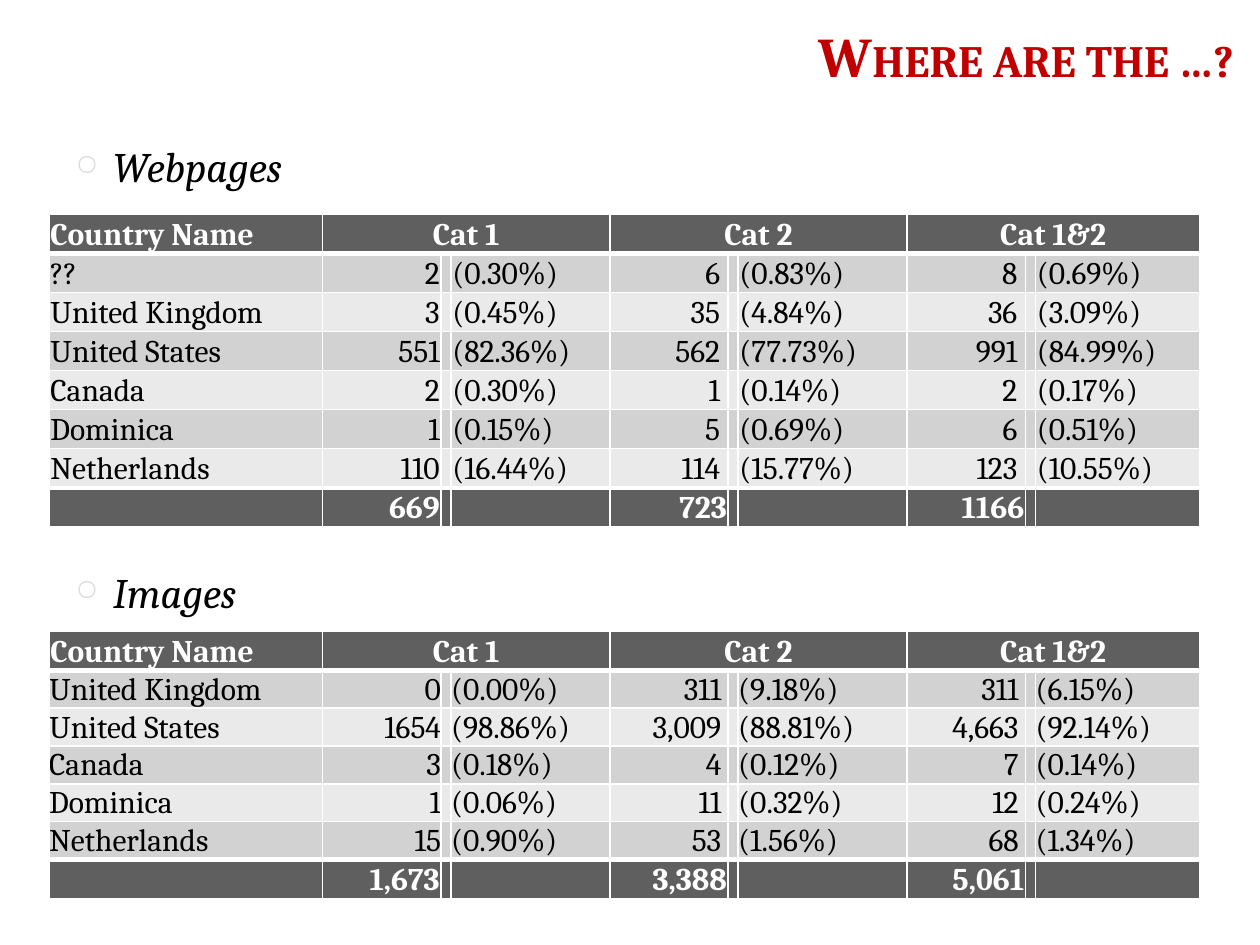
from dataclasses import dataclass

from lxml.etree import SubElement
from pptx import Presentation
from pptx.dml.color import RGBColor
from pptx.enum.text import MSO_ANCHOR as Anchor, PP_ALIGN as Align
from pptx.oxml.ns import qn
from pptx.util import Inches, Pt

FONT = "Cambria"
RED = RGBColor(0xC0, 0x00, 0x00)
BLACK = RGBColor(0x00, 0x00, 0x00)
WHITE = RGBColor(0xFF, 0xFF, 0xFF)
DARK = RGBColor(0x5F, 0x5F, 0x5F)
BANDS = (RGBColor(0xD2, 0xD2, 0xD2), RGBColor(0xEA, 0xEA, 0xEA))
WIDTHS = (2.17, 0.94, 0.08, 1.26, 0.94, 0.08, 1.34, 0.94, 0.08, 1.3)
GROUPS = {1: "Cat 1", 4: "Cat 2", 7: "Cat 1&2"}
HIGH = 0.3


@dataclass
class Entry:
    name: str
    counts: tuple[str, str, str]
    shares: tuple[str, str, str]


@dataclass
class Section:
    title: str
    top: float
    grid: float
    pad: float
    rows: list[Entry]
    totals: tuple[str, str, str]


SECTIONS = [
    Section("Webpages", 1.07, 1.7, 0.01, [
        Entry("??", ("2", "6", "8"), ("0.30", "0.83", "0.69")),
        Entry("United Kingdom", ("3", "35", "36"), ("0.45", "4.84", "3.09")),
        Entry("United States", ("551", "562", "991"), ("82.36", "77.73", "84.99")),
        Entry("Canada", ("2", "1", "2"), ("0.30", "0.14", "0.17")),
        Entry("Dominica", ("1", "5", "6"), ("0.15", "0.69", "0.51")),
        Entry("Netherlands", ("110", "114", "123"), ("16.44", "15.77", "10.55")),
    ], ("669", "723", "1166")),
    Section("Images", 4.45, 5.01, 0, [
        Entry("United Kingdom", ("0", "311", "311"), ("0.00", "9.18", "6.15")),
        Entry("United States", ("1654", "3,009", "4,663"), ("98.86", "88.81", "92.14")),
        Entry("Canada", ("3", "4", "7"), ("0.18", "0.12", "0.14")),
        Entry("Dominica", ("1", "11", "12"), ("0.06", "0.32", "0.24")),
        Entry("Netherlands", ("15", "53", "68"), ("0.90", "1.56", "1.34")),
    ], ("1,673", "3,388", "5,061")),
]


def add_run(para, text: str, size: float, color: RGBColor, bold=False, italic=False):
    run = para.add_run()
    run.text = text
    font = run.font
    font.name, font.size = FONT, Pt(size)
    font.bold, font.italic = bold, italic
    font.color.rgb = color
    return run


def add_box(slide, left: float, top: float, width: float, height: float):
    box = slide.shapes.add_textbox(
        Inches(left), Inches(top), Inches(width), Inches(height))
    box.text_frame.word_wrap = True
    return box.text_frame


def add_title(slide, text: str) -> None:
    frame = add_box(slide, 0.2, 0.14, 9.69, 0.61)
    frame.vertical_anchor = Anchor.BOTTOM
    para = frame.paragraphs[0]
    para.alignment = Align.RIGHT
    run = add_run(para, text, 32, RED, bold=True)
    run.font._element.set("cap", "small")


def add_bullet(slide, text: str, top: float) -> None:
    para = add_box(slide, 0.5, top, 9.02, 0.5).paragraphs[0]
    props = para._p.get_or_add_pPr()
    props.set("marL", str(Inches(0.3)))
    props.set("indent", str(-Inches(0.3)))
    tint = SubElement(props, qn("a:buClr"))
    SubElement(tint, qn("a:srgbClr"), val="DDDDDD")
    SubElement(props, qn("a:buSzPct"), val="70000")
    SubElement(props, qn("a:buChar"), char="○")
    add_run(para, text, 24, BLACK, italic=True)


def set_edges(cell, above: float, below: float) -> None:
    props = cell._tc.get_or_add_tcPr()
    for side, width in (("L", 1), ("R", 1), ("T", above), ("B", below)):
        line = SubElement(props, qn(f"a:ln{side}"), w=str(Pt(width)))
        fill = SubElement(line, qn("a:solidFill"))
        SubElement(fill, qn("a:srgbClr"), val=str(WHITE))


def fill_cell(cell, text: str, align, back: RGBColor, pad: float,
              strong: bool, above: float, below: float) -> None:
    set_edges(cell, above, below)
    cell.fill.solid()
    cell.fill.fore_color.rgb = back
    cell.vertical_anchor = Anchor.BOTTOM
    cell.margin_left = cell.margin_right = cell.margin_top = Inches(pad)
    cell.margin_bottom = 0
    para = cell.text_frame.paragraphs[0]
    para.alignment = align
    if text:
        add_run(para, text, 18, WHITE if strong else BLACK, bold=strong)
    else:
        SubElement(para._p, qn("a:endParaRPr"), sz="1200")


def body_texts(row: Entry) -> list[str]:
    texts = [row.name]
    for num, (count, share) in enumerate(zip(row.counts, row.shares)):
        texts += [count + (" " if num else ""), "", f"({share}%)"]
    return texts


def add_grid(slide, part: Section) -> None:
    head = ["Country Name"] + [GROUPS.get(col, "") for col in range(1, 10)]
    foot = [""]
    for total in part.totals:
        foot += [total, "", ""]
    lines = [head, *map(body_texts, part.rows), foot]
    last = len(lines) - 1
    table = slide.shapes.add_table(
        len(lines), len(WIDTHS), Inches(0.39), Inches(part.grid),
        Inches(sum(WIDTHS)), Inches(HIGH * len(lines))).table
    for col, width in zip(table.columns, WIDTHS):
        col.width = Inches(width)
    for num, texts in enumerate(lines):
        table.rows[num].height = Inches(HIGH)
        strong = num in (0, last)
        back = DARK if strong else BANDS[(num - 1) % 2]
        for col, text in enumerate(texts):
            align = Align.RIGHT if col in GROUPS else Align.LEFT
            if num == 0 and col:
                align = Align.CENTER
            fill_cell(table.cell(num, col), text, align, back,
                      0.01 if strong else part.pad, strong,
                      3 if num in (1, last) else 1,
                      3 if num in (0, last - 1) else 1)
    for col in GROUPS:
        table.cell(0, col).merge(table.cell(0, col + 2))


def main() -> None:
    deck = Presentation()
    deck.slide_width, deck.slide_height = Inches(10), Inches(7.5)
    slide = deck.slides.add_slide(deck.slide_layouts[6])
    add_title(slide, "Where are the …?")
    for part in SECTIONS:
        add_bullet(slide, part.title, part.top)
        add_grid(slide, part)
    deck.save("out.pptx")


if __name__ == "__main__":
    main()
